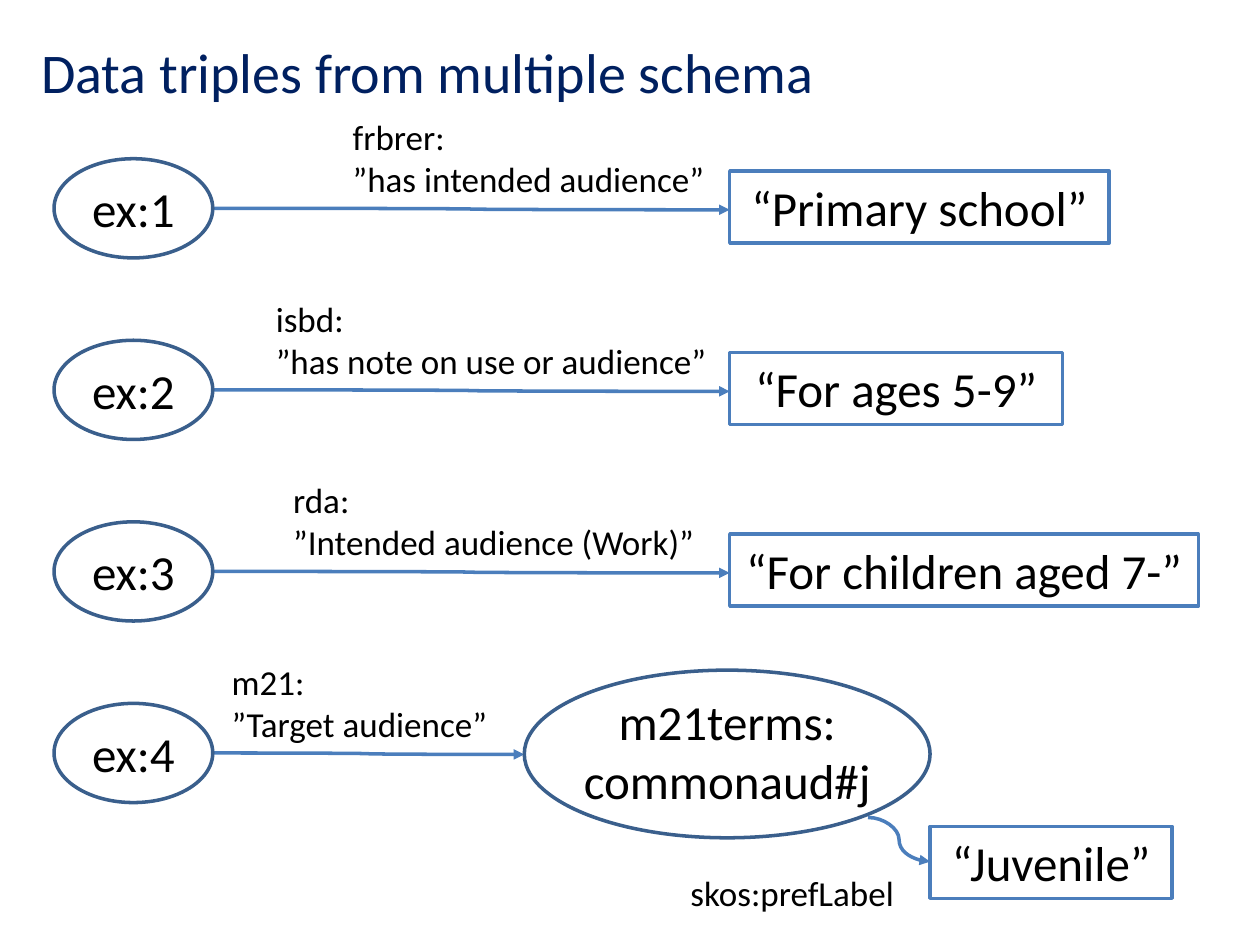
from dataclasses import dataclass

from lxml.etree import SubElement
from pptx import Presentation
from pptx.dml.color import RGBColor
from pptx.enum.shapes import MSO_CONNECTOR, MSO_SHAPE
from pptx.enum.text import MSO_ANCHOR, PP_ALIGN
from pptx.oxml.ns import qn
from pptx.shapes.shapetree import GroupShapes
from pptx.util import Cm, Pt

FONT = "Calibri"
BLACK, WHITE, NAVY = "000000", "FFFFFF", "002060"
LINE_BLUE, OVAL_BLUE = "4B7EBC", "3A5F8C"

# Shared measures in centimetres
FIRST_TOP, ROW_PITCH = 3.2, 3.66
SUBJECT_LEFT, SUBJECT_WIDTH, SUBJECT_HEIGHT = 1.09, 3.2, 2.0
SUBJECT_RIGHT = SUBJECT_LEFT + SUBJECT_WIDTH
OBJECT_LEFT, TERM_LEFT = 14.71, 10.57
LINE_HEIGHT = 1.45


@dataclass
class Area:
    left: float
    top: float
    width: float
    height: float

    def lengths(self) -> tuple:
        return Cm(self.left), Cm(self.top), Cm(self.width), Cm(self.height)


@dataclass
class Triple:
    subject: str
    predicate: list[str]
    label_left: float
    label_width: float
    arrow_end: float
    literal: str
    literal_area: Area


def color(value: str) -> RGBColor:
    return RGBColor.from_string(value)


def write(shape, lines: list[str], size: int, ink: str = BLACK,
          align: PP_ALIGN = PP_ALIGN.LEFT, wrap: bool = True) -> None:
    frame = shape.text_frame
    frame.word_wrap = wrap
    frame.text = "\n".join(lines)
    for para in frame.paragraphs:
        para.alignment = align
        para.font.name = FONT
        para.font.size = Pt(size)
        para.font.color.rgb = color(ink)


def add_label(shapes: GroupShapes, area: Area, lines: list[str], size: int = 20,
              align: PP_ALIGN = PP_ALIGN.LEFT) -> None:
    write(shapes.add_textbox(*area.lengths()), lines, size, align=align)


def add_literal(shapes: GroupShapes, area: Area, text: str) -> None:
    box = shapes.add_shape(MSO_SHAPE.RECTANGLE, *area.lengths())
    box.shadow.inherit = False
    box.fill.background()
    box.line.color.rgb = color(LINE_BLUE)
    box.line.width = Pt(2)
    box.text_frame.vertical_anchor = MSO_ANCHOR.TOP
    write(box, [text], 28, align=PP_ALIGN.CENTER)


def add_resource(shapes: GroupShapes, area: Area, lines: list[str],
                 text_top: float, text_height: float) -> None:
    oval = shapes.add_shape(MSO_SHAPE.OVAL, *area.lengths())
    oval.shadow.inherit = False
    oval.fill.solid()
    oval.fill.fore_color.rgb = color(WHITE)
    oval.line.color.rgb = color(OVAL_BLUE)
    oval.line.width = Pt(2)
    text_area = Area(area.left, area.top + text_top, area.width, text_height)
    add_label(shapes, text_area, lines, 28, PP_ALIGN.CENTER)


def add_arrow(shapes: GroupShapes, start: tuple[float, float],
              end: tuple[float, float]) -> None:
    arrow = shapes.add_connector(
        MSO_CONNECTOR.CURVE, *(Cm(value) for value in start + end))
    arrow.line.color.rgb = color(LINE_BLUE)
    arrow.line.width = Pt(2)
    SubElement(arrow.line._get_or_add_ln(), qn("a:tailEnd"), type="triangle")
    SubElement(arrow._element.spPr, qn("a:effectLst"))


def add_triple(shapes: GroupShapes, triple: Triple, top: float) -> None:
    add_arrow(shapes, (SUBJECT_RIGHT, top + 1), (triple.arrow_end, top + 1.03))
    add_literal(shapes, triple.literal_area, triple.literal)
    add_resource(shapes, Area(SUBJECT_LEFT, top, SUBJECT_WIDTH, SUBJECT_HEIGHT),
                 [triple.subject], 0.28, LINE_HEIGHT)
    add_label(shapes, Area(triple.label_left, top - 0.99, triple.label_width, 1.96),
              triple.predicate)


def row_top(row: int) -> float:
    return FIRST_TOP + row * ROW_PITCH


def object_area(row: int, width: float) -> Area:
    return Area(OBJECT_LEFT, row_top(row) + 0.25, width, LINE_HEIGHT)


TRIPLES = [
    Triple("ex:1", ["frbrer:", "”has intended audience”"], 6.86, 7.85,
           OBJECT_LEFT, "“Primary school”", object_area(0, 7.65)),
    Triple("ex:2", ["isbd:", "”has note on use or audience”"], 5.31, 9.4,
           OBJECT_LEFT, "“For ages 5-9”", object_area(1, 6.71)),
    Triple("ex:3", ["rda:", "”Intended audience (Work)”"], 5.66, 9.04,
           OBJECT_LEFT, "“For children aged 7-”", object_area(2, 9.45)),
    Triple("ex:4", ["m21:", "”Target audience”"], 4.42, 5.99,
           TERM_LEFT, "“Juvenile”", Area(18.75, 16.66, 4.88, LINE_HEIGHT)),
]


def main() -> None:
    deck = Presentation()
    deck.slide_width, deck.slide_height = Cm(25.4), Cm(19.05)
    page = deck.slides.add_slide(deck.slide_layouts[6])

    # One group per triple
    for row, triple in enumerate(TRIPLES):
        shapes = page.shapes.add_group_shape().shapes
        add_triple(shapes, triple, row_top(row))

    # The last triple passes through a vocabulary term
    add_resource(shapes, Area(TERM_LEFT, 13.51, 8.18, 3.38),
                 ["m21terms:", "commonaud#j"], 0.3, 2.64)
    add_arrow(shapes, (17.5, 16.48), (18.75, 17.37))
    add_label(shapes, Area(13.67, 17.45, 5.08, 1.12), ["skos:prefLabel"])

    # Title
    title = page.shapes.add_textbox(*Area(0.58, 0.64, 16.26, 1.62).lengths())
    write(title, ["Data triples from multiple schema"], 32, NAVY, wrap=False)

    deck.save("out.pptx")


if __name__ == "__main__":
    main()
